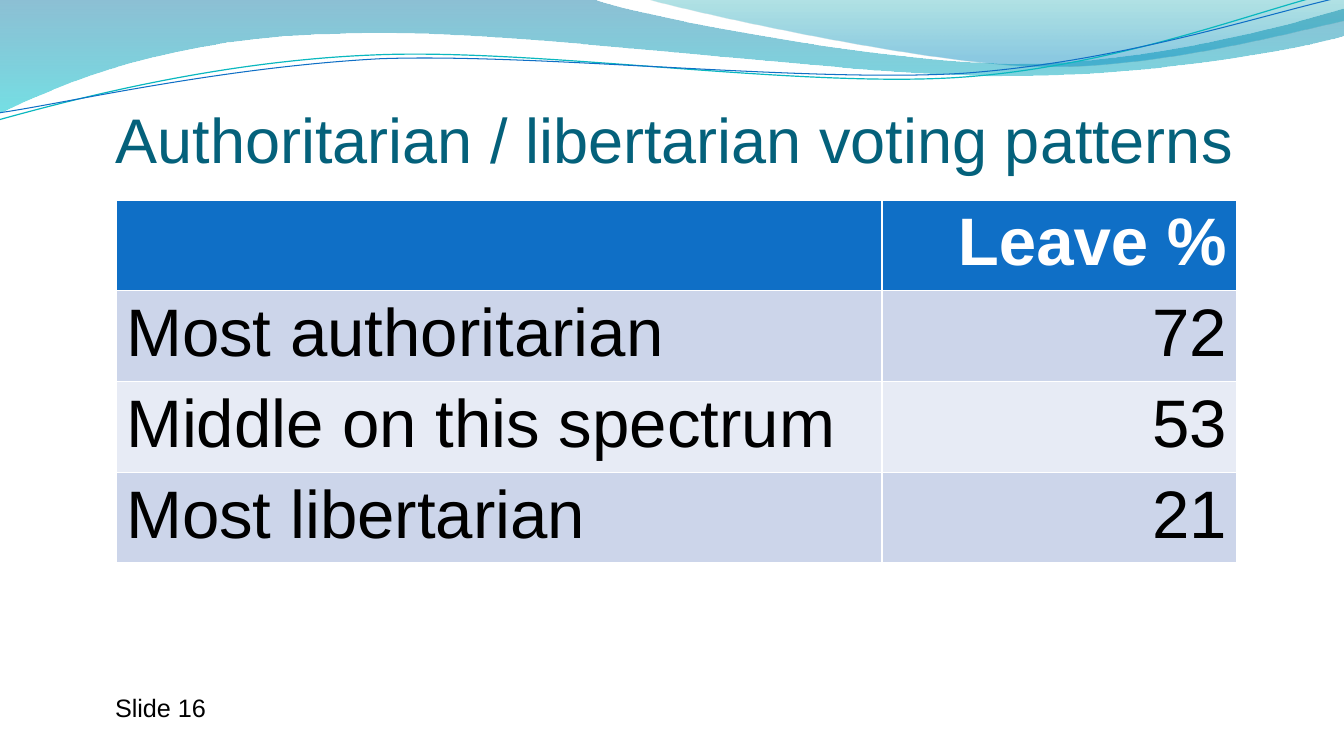
from lxml.etree import SubElement
from pptx import Presentation
from pptx.dml.color import RGBColor as RGB
from pptx.enum.text import MSO_ANCHOR as ANCHOR, PP_ALIGN as ALIGN
from pptx.oxml.ns import qn
from pptx.util import Emu, Pt

PX = 914400 / 100.8
COLORS = {
    "title": "04617B", "text": "000000", "white": "FFFFFF",
    "header": "0F6FC6", "odd_row": "CCD5EA", "even_row": "E7EBF5",
    "band_top": "0074A1", "band_bottom": "00C6CF",
    "crest_top": "00A1A9", "crest_bottom": "008BBF",
    "teal_line": "0AB8BF", "blue_line": "0F6FC6",
}
ROWS = [("", "Leave %"), ("Most authoritarian", "72"),
        ("Middle on this spectrum", "53"), ("Most libertarian", "21")]


def px(n):
    return Emu(round(n * PX))


def color(name):
    return RGB.from_string(COLORS[name])


def write(tf, text, size, fill="text", bold=False, align=ALIGN.LEFT):
    p = tf.paragraphs[0]
    p.alignment = align
    r = p.add_run()
    r.text = text
    r.font.name = "Arial"
    r.font.size = Pt(size)
    r.font.bold = bold
    r.font.color.rgb = color(fill)


def textbox(s, box, text, insets=(10, 5, 10, 5), anchor=ANCHOR.TOP, **fmt):
    tf = s.shapes.add_textbox(*map(px, box)).text_frame
    tf.word_wrap = True
    tf.vertical_anchor = anchor
    tf.margin_left, tf.margin_top, tf.margin_right, tf.margin_bottom = map(px, insets)
    write(tf, text, **fmt)


def curve(s, box, start, segments, close=False):
    left, top, width, height = map(px, box)
    builder = s.shapes.build_freeform(left, top)
    builder.add_line_segments([(left + width, top + height)], close=close)
    sp = builder.convert_to_shape()
    sp.shadow.inherit = False
    outline = next(sp._element.spPr.iter(qn("a:path")))
    for step in list(outline):
        outline.remove(step)
    for seg in [start, *segments]:
        tag = "moveTo" if seg is start else "lnTo" if len(seg) == 2 else "cubicBezTo"
        step = SubElement(outline, qn("a:" + tag))
        for x, y in zip(seg[::2], seg[1::2]):
            SubElement(step, qn("a:pt"), x=str(px(x)), y=str(px(y)))
    if close:
        SubElement(outline, qn("a:close"))
    return sp


def wave(s, box, start, segments, stops):
    sp = curve(s, box, start, segments, close=True)
    sp.line.fill.background()
    sp.fill.gradient()
    sp.fill.gradient_angle = 270
    for stop, (position, name, alpha) in zip(sp.fill.gradient_stops, stops):
        stop.position = position
        stop.color.rgb = color(name)
    for clr, (_, _, alpha) in zip(sp._element.spPr.iter(qn("a:srgbClr")), stops):
        SubElement(clr, qn("a:alpha"), val=str(alpha * 1000))


def strand(s, box, start, segments, name, width):
    sp = curve(s, box, start, segments)
    sp.rotation = -2.7
    sp.fill.background()
    sp.line.color.rgb = color(name)
    sp.line.width = Pt(width)


def wave_header(s, box):
    x, y = box[:2]
    wave(s, (x - 1, y - 1, 1347, 115), (1, 1), [
        (593, 0), (640, 18, 893, 65, 1020, 65), (1148, 65, 1289, 27, 1345, 10),
        (1347, 37), (1322, 45, 1170, 78, 1003, 77), (837, 77, 514, 29, 347, 35),
        (174, 37, 62, 85, 0, 115), (1, 1)],
        [(0, "band_top", 45), (1, "band_bottom", 55)])
    wave(s, (x + 644, y - 1, 700, 71), (0, 0), [
        (40, 12, 272, 63, 389, 67), (506, 71, 648, 33, 700, 22), (700, 1), (0, 0)],
        [(0, "crest_top", 30), (0.8, "crest_bottom", 45)])
    strand(s, (x - 3, y + 22, 1347, 71), (0, 66), [
        (67, 51, 216, 18, 375, 19), (535, 19, 797, 72, 960, 69),
        (1121, 66, 1267, 14, 1347, 0)], "teal_line", 0.85)
    strand(s, (x - 2, y + 30, 1349, 58), (0, 51), [
        (64, 45, 222, 16, 383, 15), (543, 17, 803, 59, 964, 57),
        (1125, 53, 1268, 12, 1349, -2)], "blue_line", 0.75)


def vote_table(s, box):
    frame = s.shapes.add_table(len(ROWS), 2, *map(px, box))
    table = frame.table
    left_col = 766
    table.columns[0].width = px(left_col)
    table.columns[1].width = px(box[2] - left_col)
    for i, row in enumerate(ROWS):
        table.rows[i].height = px(41)
        head = i == 0
        fill = "header" if head else "odd_row" if i % 2 else "even_row"
        for j, text in enumerate(row):
            cell = table.cell(i, j)
            cell.fill.solid()
            cell.fill.fore_color.rgb = color(fill)
            if text:
                write(cell.text_frame, text, size=48, bold=head,
                      fill="white" if head else "text",
                      align=ALIGN.RIGHT if j else ALIGN.LEFT)
    frame.height = px(box[3])


def voting_slide(prs):
    s = prs.slides.add_slide(prs.slide_layouts[6])
    wave_header(s, (0, 0, 1344, 120))
    textbox(s, (116, 88, 1210, 88), "Authoritarian / libertarian voting patterns",
            insets=(0, 5, 0, 0), anchor=ANCHOR.BOTTOM, size=45, fill="title")
    vote_table(s, (116, 200, 1121, 363))
    textbox(s, (105, 687, 119, 40), "Slide 16", size=18)


def main():
    prs = Presentation()
    prs.slide_width, prs.slide_height = px(1344), px(756)
    voting_slide(prs)
    prs.save("out.pptx")


if __name__ == "__main__":
    main()
